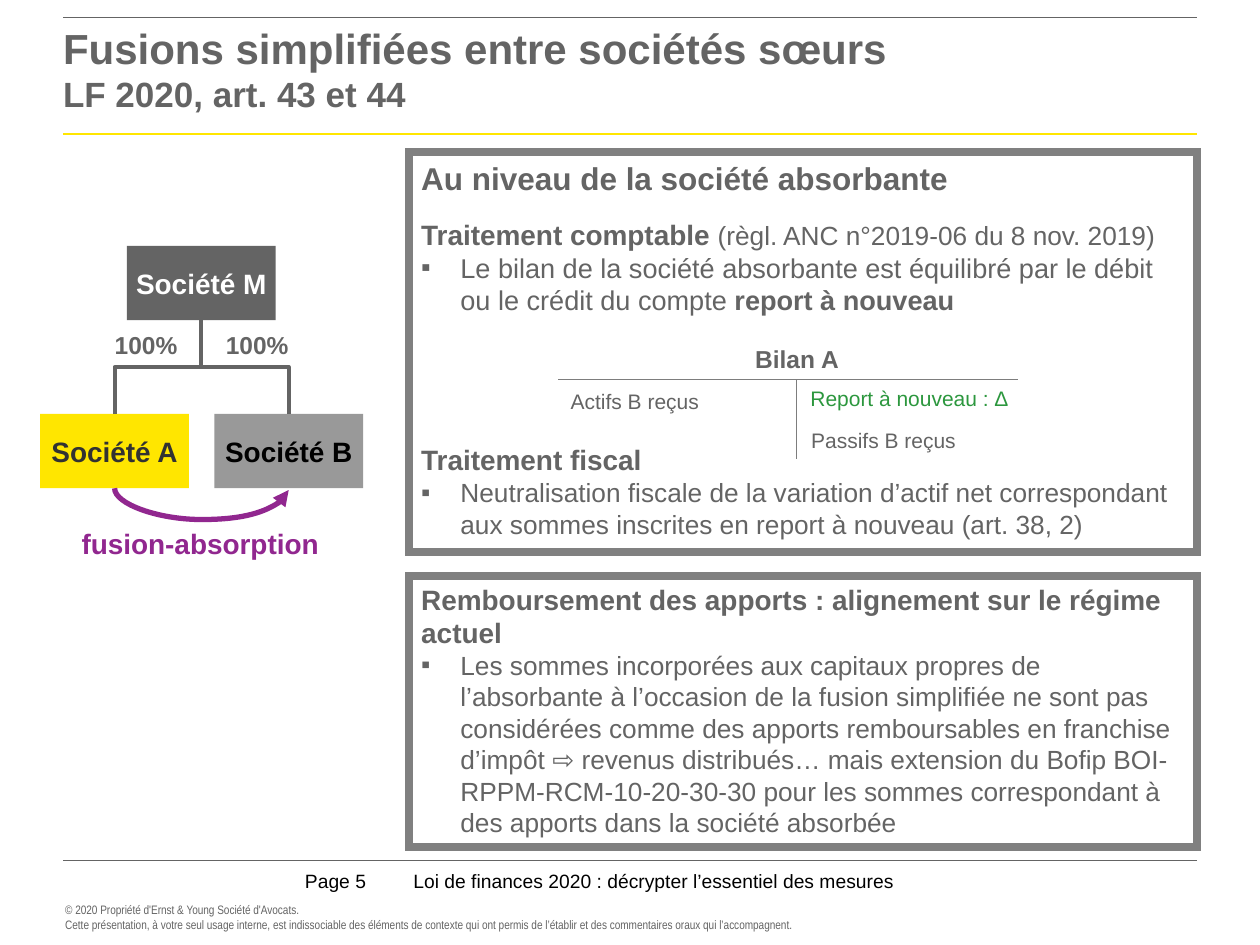
from dataclasses import dataclass

from pptx import Presentation
from pptx.dml.color import RGBColor
from pptx.enum.shapes import MSO_CONNECTOR, MSO_SHAPE
from pptx.enum.text import MSO_ANCHOR, MSO_AUTO_SIZE, PP_ALIGN
from pptx.oxml.ns import qn
from pptx.util import Pt
from lxml.etree import SubElement

GREY, RULE_GREY, PANEL_GREY = "646464", "7D7D7D", "808080"
YELLOW, PURPLE, GREEN, WHITE, BLACK = "FFE600", "91278F", "2C973E", "FFFFFF", "000000"


@dataclass
class Span:
    text: str
    size: float
    bold: bool = False


@dataclass
class Line:
    spans: list[Span]
    bullet: bool = False
    before: float = 0


@dataclass
class Panel:
    top: float
    height: float
    right_inset: float
    lines: list[Line]


@dataclass
class Label:
    text: str
    left: float
    top: float
    width: float
    height: float
    size: float
    color: str = GREY
    bold: bool = False
    centered: bool = False
    inset: bool = True
    font: str = "Arial"


@dataclass
class Company:
    name: str
    left: float
    top: float
    fill: str
    color: str


@dataclass
class Rule:
    x1: float
    y1: float
    x2: float
    y2: float
    color: str
    weight: float


PANELS = [
    Panel(87, 228.5, 5.76, [
        Line([Span("Au niveau de la société absorbante", 18, True)]),
        Line([Span("Traitement comptable ", 16, True),
              Span("(règl. ANC n°2019-06 du 8 nov. 2019)", 15)], before=12),
        Line([Span("Le bilan de la société absorbante est équilibré par le débit "
                   "ou le crédit du compte ", 15.5),
              Span("report à nouveau", 15.5, True)], bullet=True),
        Line([Span("Traitement fiscal", 16, True)], before=72.5),
        Line([Span("Neutralisation fiscale de la variation d’actif net correspondant "
                   "aux sommes inscrites en report à nouveau (art. 38, 2)", 15)], bullet=True),
    ]),
    Panel(329, 155, 7.2, [
        Line([Span("Remboursement des apports : alignement sur le régime actuel", 16, True)]),
        Line([Span("Les sommes incorporées aux capitaux propres de l’absorbante à l’occasion "
                   "de la fusion simplifiée ne sont pas considérées comme des apports "
                   "remboursables en franchise d’impôt ⇨ revenus distribués… mais extension "
                   "du Bofip BOI-RPPM-RCM-10-20-30-30 pour les sommes correspondant à des "
                   "apports dans la société absorbée", 15)], bullet=True),
    ]),
]

COMPANY_W, COMPANY_H = 85, 42.5
PARENT = Company("Société M", 72.5, 140.5, GREY, WHITE)
ABSORBING = Company("Société A", 23, 236.5, YELLOW, "323232")
ABSORBED = Company("Société B", 122.5, 236.5, "999999", BLACK)

RULES = [
    Rule(36, 10, 684, 10, GREY, 0.5),
    Rule(36, 76.5, 684, 76.5, YELLOW, 1),
    Rule(36, 491.5, 684, 491.5, GREY, 0.25),
    Rule(319, 216.7, 582, 216.7, RULE_GREY, 0.75),
    Rule(455, 216.7, 455, 262.5, RULE_GREY, 0.75),
]

LABELS = [
    Label("Bilan A", 396, 193, 119, 24, 14, bold=True, centered=True),
    Label("Actifs B reçus", 319, 218.2, 101, 36, 12),
    Label("Passifs B reçus", 456.5, 240.7, 125, 22, 12),
    Label("Report à nouveau : Δ", 456, 216.7, 129, 36, 12, GREEN),
    Label("100%", 116, 185, 62, 24, 14, bold=True, centered=True),
    Label("100%", 52.5, 185, 62, 24, 14, bold=True, centered=True),
    Label("fusion-absorption", 31.7, 297.5, 165.5, 27, 16, PURPLE, True, True),
    Label("Page 5", 174.3, 497, 52.5, 16, 11, BLACK, inset=False),
    Label("Loi de finances 2020 : décrypter l’essentiel des mesures",
          236.2, 497, 334, 16, 11, BLACK, inset=False),
    Label("© 2020 Propriété d'Ernst & Young Société d'Avocats.\v"
          "Cette présentation, à votre seul usage interne, est indissociable des éléments "
          "de contexte qui ont permis de l’établir et des commentaires oraux qui "
          "l’accompagnent.", 30.2, 512, 540, 24.5, 7, font="Arial Narrow"),
]


def rgb(color: str) -> RGBColor:
    return RGBColor.from_string(color)


def style(run, size: float, color: str, bold: bool, font: str = "Arial") -> None:
    run.font.name, run.font.size, run.font.bold = font, Pt(size), bold
    run.font.color.rgb = rgb(color)


def place(shape, left: float, top: float, width: float, height: float) -> None:
    shape.left, shape.top, shape.width, shape.height = map(Pt, (left, top, width, height))


def set_insets(frame, left: float, top: float, right: float, bottom: float) -> None:
    frame.margin_left, frame.margin_top = Pt(left), Pt(top)
    frame.margin_right, frame.margin_bottom = Pt(right), Pt(bottom)


def set_bullet(paragraph, bullet: bool) -> None:
    props = paragraph._p.get_or_add_pPr()
    indent = Pt(22.4) if bullet else 0
    props.set("marL", str(indent))
    props.set("indent", str(-indent))
    if bullet:
        SubElement(props, qn("a:buFont"), typeface="Arial")
        SubElement(props, qn("a:buChar"), char="▪")
    else:
        SubElement(props, qn("a:buNone"))


def fill_title(title) -> None:
    place(title, 36, 10, 648, 67.5)
    frame = title.text_frame
    frame.auto_size, frame.vertical_anchor = MSO_AUTO_SIZE.NONE, MSO_ANCHOR.TOP
    set_insets(frame, 0, 2.88, 0, 0)
    heading = frame.paragraphs[0]
    heading.text = "Fusions simplifiées entre sociétés sœurs\vLF 2020, art. 43 et 44"
    heading.alignment, heading.line_spacing = PP_ALIGN.LEFT, 1.0
    for run, size in zip(heading.runs, (24, 20)):
        style(run, size, GREY, True)


def fill_panel(body, panel: Panel) -> None:
    place(body, 233.5, panel.top, 450.5, panel.height)
    body.fill.solid()
    body.fill.fore_color.rgb = rgb(WHITE)
    body.line.color.rgb, body.line.width = rgb(PANEL_GREY), Pt(4.5)
    SubElement(body.line._get_or_add_ln(), qn("a:miter"), lim="800000")
    frame = body.text_frame
    frame.auto_size, frame.vertical_anchor = MSO_AUTO_SIZE.NONE, MSO_ANCHOR.TOP
    set_insets(frame, 7.2, 3.6, panel.right_inset, 3.6)
    for index, line in enumerate(panel.lines):
        paragraph = frame.add_paragraph() if index else frame.paragraphs[0]
        set_bullet(paragraph, line.bullet)
        paragraph.line_spacing, paragraph.space_before = 1.0, Pt(line.before)
        for span in line.spans:
            run = paragraph.add_run()
            run.text = span.text
            style(run, span.size, GREY, span.bold)


def add_label(slide, label: Label) -> None:
    box = slide.shapes.add_textbox(
        *map(Pt, (label.left, label.top, label.width, label.height)))
    box.text_frame.word_wrap = True
    if not label.inset:
        set_insets(box.text_frame, 0, 0, 0, 0)
    paragraph = box.text_frame.paragraphs[0]
    paragraph.text = label.text
    paragraph.alignment = PP_ALIGN.CENTER if label.centered else PP_ALIGN.LEFT
    for run in paragraph.runs:
        style(run, label.size, label.color, label.bold, label.font)


def add_company(slide, company: Company) -> None:
    box = slide.shapes.add_shape(
        MSO_SHAPE.RECTANGLE, *map(Pt, (company.left, company.top, COMPANY_W, COMPANY_H)))
    box.shadow.inherit = False
    box.fill.solid()
    box.fill.fore_color.rgb = rgb(company.fill)
    box.line.fill.background()
    set_insets(box.text_frame, 2.88, 0, 2.88, 0)
    box.text_frame.vertical_anchor = MSO_ANCHOR.MIDDLE
    box.text_frame.text = company.name
    paragraph = box.text_frame.paragraphs[0]
    paragraph.alignment = PP_ALIGN.CENTER
    style(paragraph.runs[0], 16, company.color, True)


def add_rule(slide, rule: Rule, kind=MSO_CONNECTOR.STRAIGHT):
    connector = slide.shapes.add_connector(
        kind, *map(Pt, (rule.x1, rule.y1, rule.x2, rule.y2)))
    connector.line.color.rgb, connector.line.width = rgb(rule.color), Pt(rule.weight)
    SubElement(connector._element.spPr, qn("a:effectLst"))
    return connector


def add_downward_link(slide, link: Rule, kind, bend: float):
    """Draw a link that leaves its start vertically; bend is a share of its drop."""
    mid_x, mid_y = (link.x1 + link.x2) / 2, (link.y1 + link.y2) / 2
    half_drop, half_span = (link.y2 - link.y1) / 2, abs(link.x2 - link.x1) / 2
    to_right = link.x2 > link.x1
    reach = half_drop if to_right else -half_drop
    turned = Rule(mid_x + reach, mid_y - half_span, mid_x - reach, mid_y + half_span,
                  link.color, link.weight)
    connector = add_rule(slide, turned, kind)
    properties = connector._element.spPr
    properties.find(qn("a:xfrm")).set("rot", str((270 if to_right else 90) * 60000))
    adjustments = properties.find(qn("a:prstGeom")).get_or_add_avLst()
    SubElement(adjustments, qn("a:gd"), name="adj1", fmla=f"val {round(bend * 100000)}")
    return connector


def center_x(company: Company) -> float:
    return company.left + COMPANY_W / 2


def add_structure(slide) -> None:
    for company in (ABSORBING, ABSORBED, PARENT):
        add_company(slide, company)
    for subsidiary in (ABSORBING, ABSORBED):
        holding = Rule(center_x(PARENT), PARENT.top + COMPANY_H,
                       center_x(subsidiary), subsidiary.top, GREY, 2.25)
        add_downward_link(slide, holding, MSO_CONNECTOR.ELBOW, 0.5)
    base = ABSORBING.top + COMPANY_H
    merger = Rule(center_x(ABSORBING), base, center_x(ABSORBED), base + 1, PURPLE, 3)
    arrow = add_downward_link(slide, merger, MSO_CONNECTOR.CURVE, 18)
    SubElement(arrow.line._get_or_add_ln(), qn("a:tailEnd"), type="triangle")


def main() -> None:
    deck = Presentation()
    deck.slide_width, deck.slide_height = Pt(720), Pt(540)
    slide = deck.slides.add_slide(deck.slide_layouts.get_by_name("Two Content"))
    fill_title(slide.shapes.title)
    for index, panel in enumerate(PANELS, start=1):
        fill_panel(slide.placeholders[index], panel)
    for rule in RULES:
        add_rule(slide, rule)
    add_structure(slide)
    for label in LABELS:
        add_label(slide, label)
    deck.save("out.pptx")


if __name__ == "__main__":
    main()
